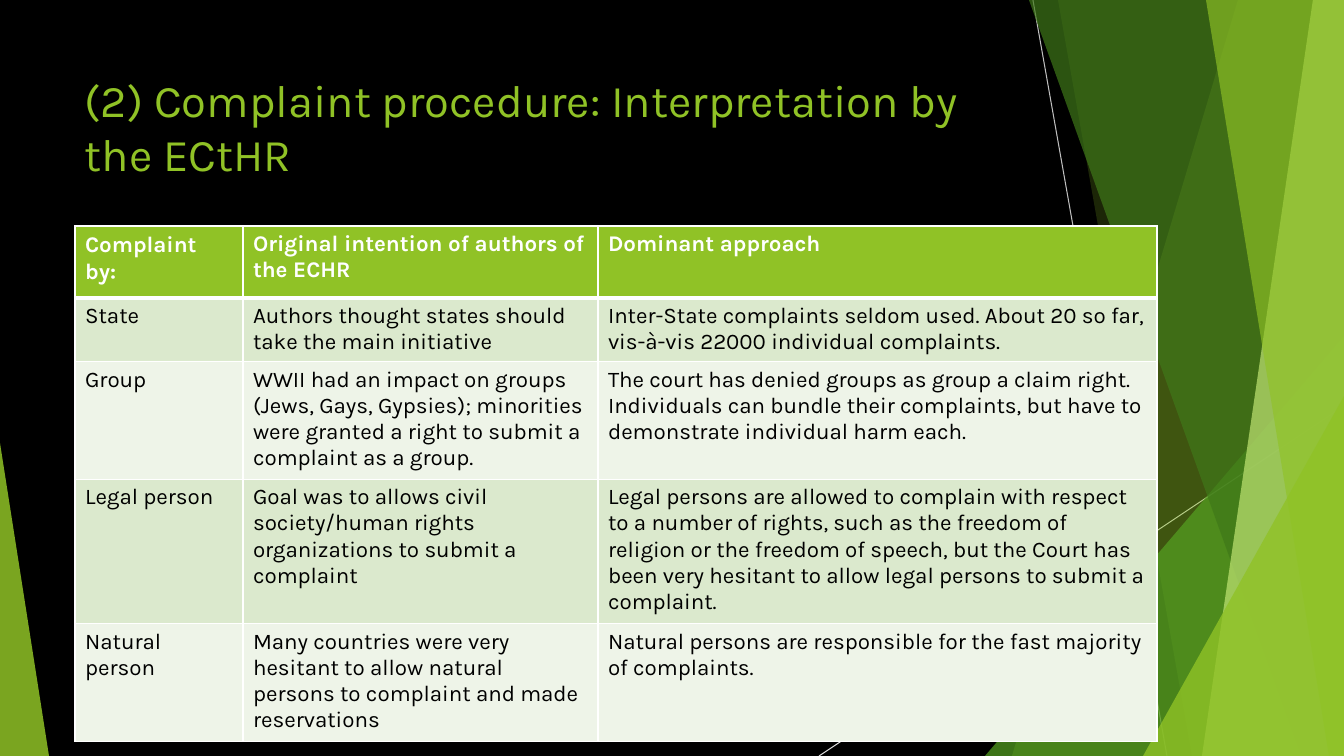
from pptx import Presentation
from pptx.dml.color import RGBColor
from pptx.enum.shapes import MSO_CONNECTOR, MSO_SHAPE
from pptx.enum.text import MSO_ANCHOR
from pptx.oxml.ns import qn
from pptx.util import Emu, Pt
from lxml.etree import SubElement

EMU_PER_PX = 914400 / 100.8
WIDTH, HEIGHT = 1344, 756

BLACK = RGBColor(0x00, 0x00, 0x00)
WHITE = RGBColor(0xFF, 0xFF, 0xFF)
GREEN = RGBColor(0x90, 0xC2, 0x26)
MID_GREEN = RGBColor(0x54, 0xA0, 0x21)
DARK_GREEN = RGBColor(0x3F, 0x78, 0x19)
LIME = RGBColor(0xC0, 0xE4, 0x74)
BAND_DARK = RGBColor(0xDB, 0xE9, 0xCD)
BAND_LIGHT = RGBColor(0xEE, 0xF4, 0xE8)
GREY = RGBColor(0xBF, 0xBF, 0xBF)
LIGHT_GREY = RGBColor(0xD9, 0xD9, 0xD9)

# Each line: x1, y1, x2, y2, colour
LINES = [(1033, 0, 1167, HEIGHT, GREY), (WIDTH, 406, 819, HEIGHT, LIGHT_GREY)]

# Each facet: left x at the top, left x at the bottom, colour, opacity in percent
BACK_FACETS = [(1238, 1012, GREEN, 30), (1058, 1192, GREEN, 20)]
FRONT_FACETS = [
    (1029, 1301, DARK_GREEN, 70),
    (1313, 1202, LIME, 70),
    (1206, 1329, GREEN, 65),
]

COLUMNS = [168, 355, 559]
ROWS = [70, 63, 115, 141, 115]
COMPLAINTS = [
    ("Complaint by:", "Original intention of authors of the ECHR", "Dominant approach"),
    ("State",
     "Authors thought states should take the main initiative",
     "Inter-State complaints seldom used. About 20 so far, vis-à-vis 22000 "
     "individual complaints."),
    ("Group",
     "WWII had an impact on groups (Jews, Gays, Gypsies); minorities were "
     "granted a right to submit a complaint as a group.",
     "The court has denied groups as group a claim right. Individuals can "
     "bundle their complaints, but have to demonstrate individual harm each."),
    ("Legal person",
     "Goal was to allows civil society/human rights organizations to submit a complaint",
     "Legal persons are allowed to complain with respect to a number of rights, "
     "such as the freedom of religion or the freedom of speech, but the Court "
     "has been very hesitant to allow legal persons to submit a complaint."),
    ("Natural person",
     "Many countries were very hesitant to allow natural persons to complaint "
     "and made reservations",
     "Natural persons are responsible for the fast majority of complaints."),
]


def px(n):
    return Emu(round(n * EMU_PER_PX))


class Deck:
    font = "Karla"

    def __init__(self):
        self.prs = Presentation()
        self.prs.slide_width, self.prs.slide_height = px(WIDTH), px(HEIGHT)

    def add_slide(self, background):
        self.slide = self.prs.slides.add_slide(self.prs.slide_layouts[6])
        fill = self.slide.background.fill
        fill.solid()
        fill.fore_color.rgb = background

    def line(self, x1, y1, x2, y2, color):
        cxn = self.slide.shapes.add_connector(
            MSO_CONNECTOR.STRAIGHT, px(x1), px(y1), px(x2), px(y2))
        cxn.line.color.rgb = color
        cxn.line.width = Pt(0.75)
        SubElement(cxn._element.spPr, qn("a:effectLst"))

    def paint(self, sp, color, opacity):
        """Give a shape a translucent fill with no outline or shadow."""
        sp.shadow.inherit = False
        sp.line.fill.background()
        sp.fill.solid()
        sp.fill.fore_color.rgb = color
        clr = sp._element.spPr.find(qn("a:solidFill")).find(qn("a:srgbClr"))
        SubElement(clr, qn("a:alpha"), val=str(opacity * 1000))

    def facet(self, top_x, bottom_x, color, opacity):
        """Draw a full-height panel from a slanted left edge to the slide's right edge."""
        builder = self.slide.shapes.build_freeform(top_x, 0, scale=EMU_PER_PX)
        builder.add_line_segments([(WIDTH, 0), (WIDTH, HEIGHT), (bottom_x, HEIGHT)])
        self.paint(builder.convert_to_shape(), color, opacity)

    def triangle(self, x, y, w, apex, color, opacity):
        """Draw a triangle standing on the slide's bottom edge; apex is 0 (left) to 1 (right)."""
        sp = self.slide.shapes.add_shape(
            MSO_SHAPE.ISOSCELES_TRIANGLE, px(x), px(y), px(w), px(HEIGHT - y))
        sp.adjustments[0] = apex
        self.paint(sp, color, opacity)

    def set_text(self, tf, text, size, color, bold=False):
        p = tf.paragraphs[0]
        p.text = text
        for r in p.runs:
            r.font.name = self.font
            r.font.size = Pt(size)
            r.font.bold = bold
            r.font.color.rgb = color

    def title(self, x, y, w, h, text):
        tf = self.slide.shapes.add_textbox(px(x), px(y), px(w), px(h)).text_frame
        tf.word_wrap = True
        self.set_text(tf, text, 32.4, GREEN)

    def border(self, cell, side, width):
        ln = SubElement(cell._tc.get_or_add_tcPr(), qn(f"a:ln{side}"), w=str(Pt(width)))
        fill = SubElement(ln, qn("a:solidFill"))
        SubElement(fill, qn("a:srgbClr"), val=str(WHITE))

    def table(self, x, y, columns, rows, data):
        table = self.slide.shapes.add_table(
            len(rows), len(columns), px(x), px(y), px(sum(columns)), px(sum(rows))).table
        for column, width in zip(table.columns, columns):
            column.width = px(width)
        for i, (row, height) in enumerate(zip(table.rows, rows)):
            row.height = px(height)
            header = i == 0
            band = GREEN if header else BAND_DARK if i % 2 else BAND_LIGHT
            for cell, text in zip(row.cells, data[i]):
                for side in "LRTB":
                    thick = (i, side) in ((0, "B"), (1, "T"))
                    self.border(cell, side, 3 if thick else 1)
                cell.fill.solid()
                cell.fill.fore_color.rgb = band
                self.set_text(cell.text_frame, text, 16, WHITE if header else BLACK, header)
        return table


def main():
    deck = Deck()
    deck.add_slide(BLACK)
    for line in LINES:
        deck.line(*line)
    for facet in BACK_FACETS:
        deck.facet(*facet)
    deck.triangle(985, 336, 359, 1, MID_GREEN, 72)
    for facet in FRONT_FACETS:
        deck.facet(*facet)
    deck.triangle(1143, 396, 201, 1, GREEN, 80)
    deck.triangle(0, 443, 49, 0, GREEN, 85)

    deck.title(75, 67, 948, 146, "(2) Complaint procedure: Interpretation by \vthe ECtHR")
    table = deck.table(75, 226, COLUMNS, ROWS, COMPLAINTS)
    corner = table.cell(0, 0)
    corner.vertical_anchor = MSO_ANCHOR.BOTTOM
    corner.margin_bottom = px(13)
    deck.prs.save("out.pptx")


if __name__ == "__main__":
    main()
